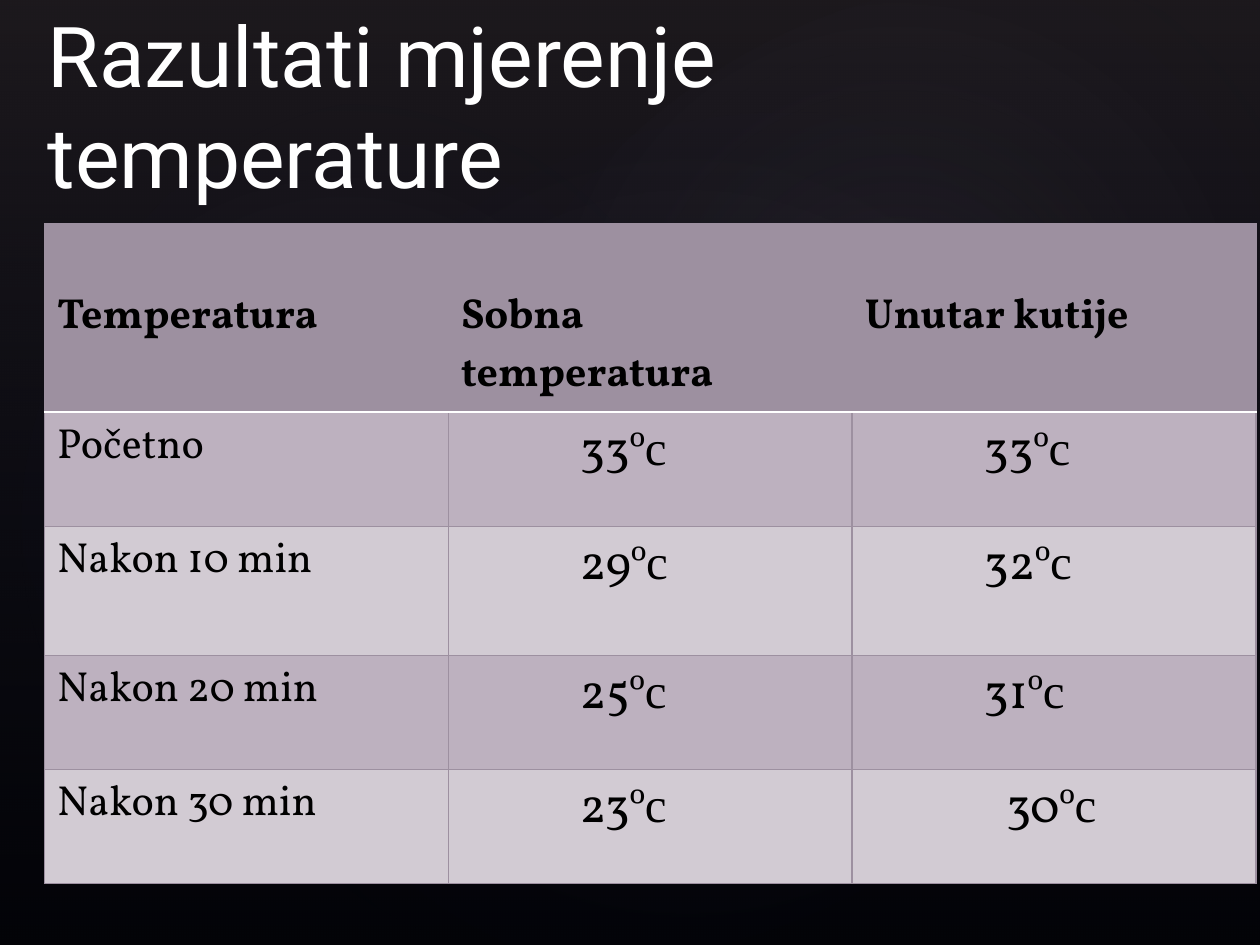
from lxml.etree import SubElement
from pptx import Presentation
from pptx.dml.color import RGBColor
from pptx.enum.shapes import MSO_SHAPE
from pptx.enum.text import MSO_ANCHOR
from pptx.oxml import parse_xml
from pptx.oxml.ns import nsdecls, qn
from pptx.util import Cm, Pt


def hue(code):
    return RGBColor.from_string(code)


def style(run, **form):
    run.font.color.rgb = hue(form.pop("color"))
    for key, value in form.items():
        setattr(run.font, key, value)


deck = Presentation()
deck.slide_width, deck.slide_height = Cm(25.4), Cm(19.05)
slide = deck.slides.add_slide(deck.slide_layouts[6])
back = slide.background.fill
back.solid()
back.fore_color.rgb = hue("000000")

line = '<a:lin ang="5400000" scaled="0"/>'
glow = '<a:path path="circle"><a:fillToRect l="50000" t="50000" r="50000" b="50000"/></a:path>'
night = (0, "504652", 36), (100, "242852", 10)
faint = (0, "C4BCC6", 7), (58, "242852", 0)
soft = (0, "C4BCC6", 8), (58, "242852", 0)
layers = [
    (MSO_SHAPE.RECTANGLE, (0, 0, 25.4, 19.05), 0, night, line),
    (MSO_SHAPE.OVAL, (3.81, 2.9, 20.12, 15.85), 328.7, faint, glow),
    (MSO_SHAPE.OVAL, (-0.76, 3.25, 15.39, 12.45), 294.3, soft, glow),
    (MSO_SHAPE.OVAL, (9.09, 0.33, 18.01, 13.21), 328.7, soft, glow),
]
for kind, place, turn, stops, path in layers:
    shape = slide.shapes.add_shape(kind, *map(Cm, place))
    shape.rotation = turn
    shape.shadow.inherit = False
    shape.line.fill.background()
    marks = "".join(
        f'<a:gs pos="{pos * 1000}"><a:srgbClr val="{code}">'
        f'<a:alpha val="{alpha * 1000}"/></a:srgbClr></a:gs>'
        for pos, code, alpha in stops
    )
    grad = parse_xml(
        f'<a:gradFill {nsdecls("a")} rotWithShape="1"><a:gsLst>{marks}</a:gsLst>{path}</a:gradFill>'
    )
    shape.element.spPr.find(qn("a:prstGeom")).addnext(grad)

box = slide.shapes.add_textbox(Cm(0.71), Cm(1.73), Cm(20.96), Cm(2.54))
frame = box.text_frame
frame.word_wrap = True
frame.vertical_anchor = MSO_ANCHOR.BOTTOM
title = frame.paragraphs[0].add_run()
title.text = "Razultati mjerenje temperature"
style(title, name="Roboto", size=Pt(48), color="FFFFFF")

rows = [
    ("Temperatura", "Sobna temperatura", "Unutar kutije"),
    ("Početno", "33", "33"),
    ("Nakon 10 min", "29", "32"),
    ("Nakon 20 min", "25", "31"),
    ("Nakon 30 min", "23", "30"),
]
highs = [3.79, 2.3, 2.6, 2.3, 2.3]
table = slide.shapes.add_table(
    len(rows), 3, Cm(0.9), Cm(4.52), Cm(24.42), Cm(sum(highs))
).table
for col in table.columns:
    col.width = Cm(8.14)

for i, row in enumerate(rows):
    table.rows[i].height = Cm(highs[i])
    head = i == 0
    for j, text in enumerate(row):
        cell = table.cell(i, j)
        degree = not head and j > 0
        if head:
            cell.margin_top = Cm(1.3)
        if degree:
            cell.margin_left = Cm(3.1 if (i, j) == (4, 2) else 2.65)
        props = cell._tc.get_or_add_tcPr()
        for side in "LRTB":
            white = (side == "B" and head) or (side == "T" and i == 1)
            edge = SubElement(props, qn(f"a:ln{side}"), w=str(Pt(1.5 if white else 1)))
            paint = SubElement(edge, qn("a:solidFill"))
            SubElement(paint, qn("a:srgbClr"), val="FFFFFF" if white else "9D90A0")
        cell.fill.solid()
        cell.fill.fore_color.rgb = hue("9D90A0" if head else "BDB1BF" if i % 2 else "D2CBD3")
        para = cell.text_frame.paragraphs[0]
        parts = [(text, "Vollkorn")]
        if degree:
            parts.append(("ºc", "Times New Roman"))
        for word, face in parts:
            run = para.add_run()
            run.text = word
            style(run, name=face, size=Pt(28 if degree else 24), bold=head, color="000000")

deck.save("out.pptx")
